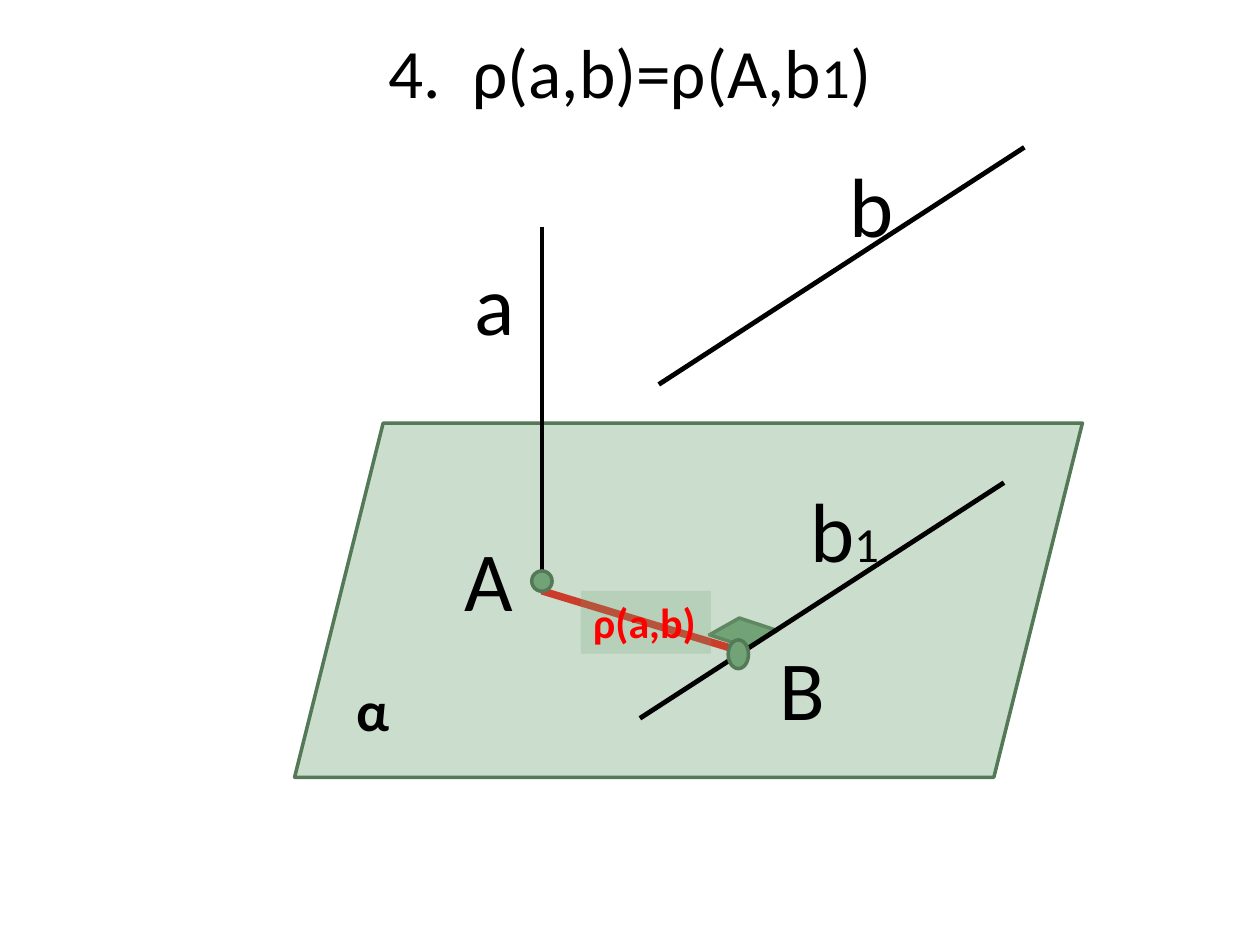
from dataclasses import dataclass

from lxml.etree import SubElement
from pptx import Presentation
from pptx.dml.color import RGBColor
from pptx.enum.shapes import MSO_CONNECTOR, MSO_SHAPE as Preset
from pptx.enum.text import MSO_ANCHOR, MSO_AUTO_SIZE, PP_ALIGN
from pptx.oxml.ns import qn
from pptx.util import Cm, Pt

COLORS = {"black": "000000", "red": "FF0000", "green": "72A376", "edge": "547957"}
FONT = "Calibri"


@dataclass
class Segment:
    start: tuple[float, float]
    end: tuple[float, float]
    width: float
    color: str = "black"


@dataclass
class Figure:
    preset: Preset
    box: tuple[float, float, float, float]
    opacity: int = 100
    outlined: bool = True
    adjustment: float | None = None
    rotation: float = 0


@dataclass
class Label:
    text: str
    box: tuple[float, float, float, float]
    size: float = 48
    bold: bool = False
    subscript: str = ""


def rgb(name: str) -> RGBColor:
    return RGBColor.from_string(COLORS[name])


def set_font(paragraph, size: float, color: str = "black", bold: bool = False) -> None:
    font = paragraph.font
    font.name, font.size, font.bold = FONT, Pt(size), bold
    font.color.rgb = rgb(color)


def add_run(paragraph, text: str, size: float) -> None:
    run = paragraph.add_run()
    run.text = text
    run.font.size = Pt(size)


def draw_segment(slide, segment: Segment) -> None:
    ends = [Cm(value) for value in segment.start + segment.end]
    connector = slide.shapes.add_connector(MSO_CONNECTOR.STRAIGHT, *ends)
    connector.line.color.rgb = rgb(segment.color)
    connector.line.width = Pt(segment.width)
    SubElement(connector._element.spPr, qn("a:effectLst"))


def draw_figure(slide, figure: Figure):
    shape = slide.shapes.add_shape(figure.preset, *map(Cm, figure.box))
    shape.shadow.inherit = False
    shape.rotation = figure.rotation
    if figure.adjustment is not None:
        shape.adjustments[0] = figure.adjustment
    shape.fill.solid()
    shape.fill.fore_color.rgb = rgb("green")
    if figure.opacity < 100:
        color = shape._element.spPr.find(qn("a:solidFill"))[0]
        SubElement(color, qn("a:alpha"), val=str(figure.opacity * 1000))
    if figure.outlined:
        shape.line.color.rgb = rgb("edge")
        shape.line.width = Pt(2)
    else:
        shape.line.fill.background()
    return shape


def fit_text(shape):
    """Let the shape hug its unwrapped text and return the first paragraph."""
    frame = shape.text_frame
    frame.word_wrap = False
    frame.auto_size = MSO_AUTO_SIZE.SHAPE_TO_FIT_TEXT
    frame.vertical_anchor = MSO_ANCHOR.TOP
    frame.paragraphs[0].alignment = PP_ALIGN.LEFT
    return frame.paragraphs[0]


def draw_label(slide, label: Label) -> None:
    paragraph = fit_text(slide.shapes.add_textbox(*map(Cm, label.box)))
    set_font(paragraph, label.size, bold=label.bold)
    paragraph.add_run().text = label.text
    if label.subscript:
        add_run(paragraph, label.subscript, 28)


def format_title(slide) -> None:
    title = slide.shapes.title
    title.left, title.top, title.width, title.height = map(Cm, (1.27, 0.76, 22.86, 3))
    frame = title.text_frame
    frame.auto_size = MSO_AUTO_SIZE.NONE
    frame.vertical_anchor = MSO_ANCHOR.MIDDLE
    paragraph = frame.paragraphs[0]
    paragraph.alignment = PP_ALIGN.CENTER
    set_font(paragraph, 39.6)
    for text, size in (("4.  ρ(а,b)=ρ(А,b", 39.6), ("1", 32.4), (")", 39.6)):
        add_run(paragraph, text, size)
    paragraph.add_line_break()


FOOT_A = (10.92, 11.91)  # where line a meets the plane

RIGHT_ANGLE = Figure(Preset.PARALLELOGRAM, (14.35, 12.5, 1.27, 0.51),
                     adjustment=0.917, rotation=18.2)
DISTANCE = Segment(FOOT_A, (14.88, 13.11), 4.25, "red")
PLANE = Figure(Preset.PARALLELOGRAM, (5.94, 8.53, 15.88, 7.14), opacity=37)
LINES = [
    Segment((10.92, 4.57), FOOT_A, 2.25),  # a
    Segment((12.9, 14.48), (20.24, 9.73), 2.75),  # b1
    Segment((13.28, 7.75), (20.65, 2.97), 2.75),  # b
]
POINTS = [
    Figure(Preset.OVAL, (10.72, 11.51, 0.41, 0.41)),  # A
    Figure(Preset.OVAL, (14.68, 12.9, 0.41, 0.58)),  # B
]
LABELS = [
    Label("а", (9.32, 4.95, 1.32, 2.31)),
    Label("А", (9.12, 10.52, 1.5, 2.31)),
    Label("b", (16.87, 2.97, 1.42, 2.31)),
    Label("b", (16.08, 9.53, 1.93, 2.31), subscript="1"),
    Label("B", (15.47, 12.7, 1.45, 2.31)),
    Label("α", (6.93, 13.49, 1.19, 1.63), size=32, bold=True),
]
DISTANCE_TAG = Figure(Preset.RECTANGLE, (11.71, 11.91, 2.62, 1.27),
                      opacity=22, outlined=False)


def main() -> None:
    presentation = Presentation()
    presentation.slide_width, presentation.slide_height = Cm(25.4), Cm(19.05)
    slide = presentation.slides.add_slide(presentation.slide_layouts[5])
    format_title(slide)

    # Right angle and distance lie under the translucent plane
    draw_figure(slide, RIGHT_ANGLE)
    draw_segment(slide, DISTANCE)
    draw_figure(slide, PLANE)

    # Lines, points and their names
    for segment in LINES:
        draw_segment(slide, segment)
    for point in POINTS:
        draw_figure(slide, point)
    for label in LABELS:
        draw_label(slide, label)

    # Tag on the distance
    paragraph = fit_text(draw_figure(slide, DISTANCE_TAG))
    set_font(paragraph, 24, "red", bold=True)
    paragraph.add_run().text = "ρ(а,b)"

    presentation.save("out.pptx")


if __name__ == "__main__":
    main()
